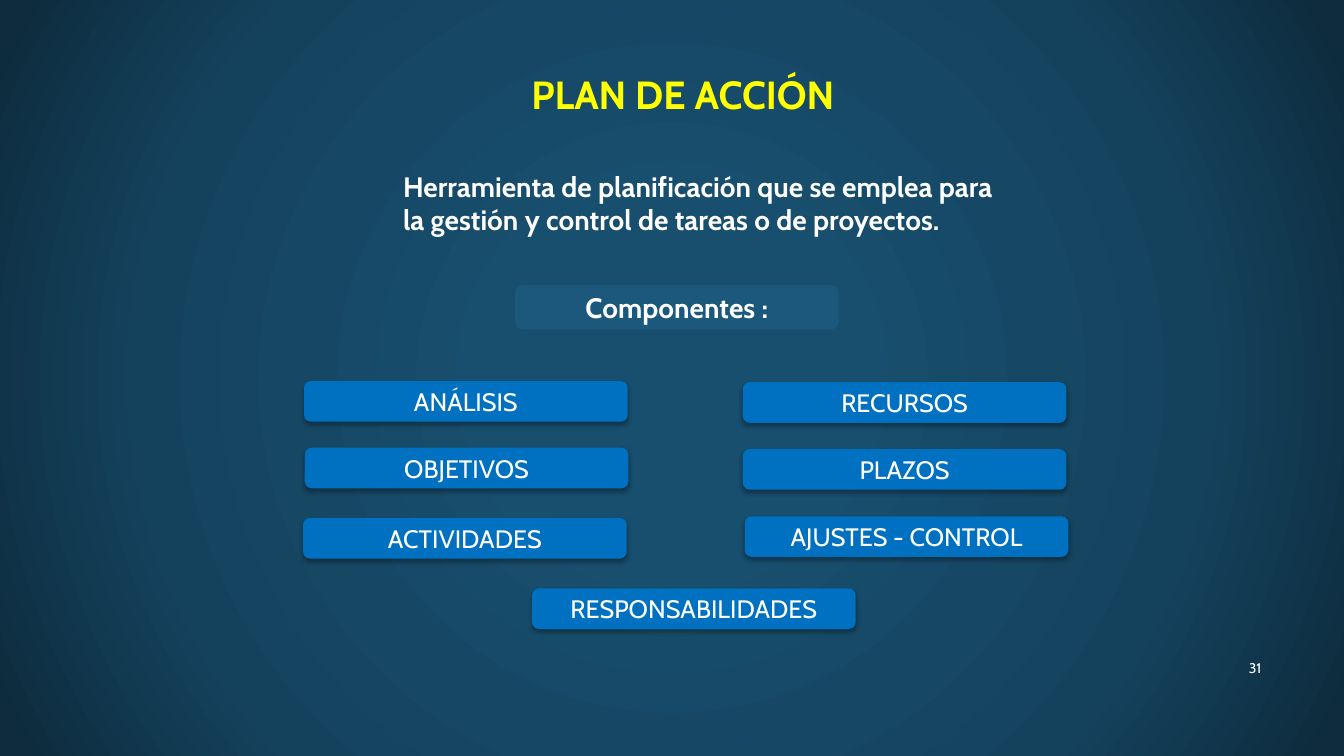
from dataclasses import dataclass

from lxml import etree
from pptx import Presentation
from pptx.dml.color import RGBColor
from pptx.enum.shapes import MSO_SHAPE
from pptx.enum.text import MSO_ANCHOR as Anchor, PP_ALIGN as Align
from pptx.oxml import parse_xml
from pptx.oxml.ns import nsdecls, qn
from pptx.shapes.autoshape import Shape
from pptx.slide import Slide
from pptx.util import Pt

FONT = "Cabin"
WHITE = RGBColor(0xFF, 0xFF, 0xFF)
YELLOW = RGBColor(0xFF, 0xFF, 0x00)
BLUE = RGBColor(0x00, 0x70, 0xC0)
TEAL = RGBColor(0x1B, 0x58, 0x7C)
BLACK = RGBColor(0x00, 0x00, 0x00)
BACKGROUND_STOPS = (
    (0, RGBColor(0x18, 0x4E, 0x6E)),
    (23, RGBColor(0x18, 0x4E, 0x6E)),
    (69, RGBColor(0x14, 0x42, 0x5D)),
    (97, RGBColor(0x0E, 0x2C, 0x3E)),
)
BUTTON_WIDTH = 231.1


@dataclass(frozen=True)
class Button:
    text: str
    left: float
    top: float
    height: float = 29
    size: float = 18
    fill: RGBColor = BLUE
    bold: bool = False
    shadow: bool = True


BUTTONS = (
    # Left column
    Button("ANÁLISIS", 217.2, 272.2),
    Button("OBJETIVOS", 217.7, 319.8),
    Button("ACTIVIDADES", 216.5, 370),
    # Bottom centre
    Button("RESPONSABILIDADES", 380, 420.3),
    # Right column
    Button("RECURSOS", 530.6, 273),
    Button("PLAZOS", 530.6, 320.8),
    Button("AJUSTES - CONTROL", 532, 368.8),
    # Heading above the columns
    Button("Componentes :", 367.9, 203.6, 31.7, 20, TEAL, bold=True, shadow=False),
)


def write_text(shape: Shape, text: str, size: float, color: RGBColor = WHITE,
               bold: bool = False, align: Align = Align.CENTER,
               anchor: Anchor = Anchor.MIDDLE) -> None:
    frame = shape.text_frame
    frame.text = text
    frame.word_wrap = True
    frame.vertical_anchor = anchor
    paragraph = frame.paragraphs[0]
    paragraph.alignment = align
    font = paragraph.runs[0].font
    font.name, font.size, font.bold = FONT, Pt(size), bold
    font.color.rgb = color


def set_background(slide: Slide) -> None:
    stops = "".join(
        f'<a:gs pos="{position * 1000}"><a:srgbClr val="{color}"/></a:gs>'
        for position, color in BACKGROUND_STOPS)
    background = parse_xml(
        f'<p:bg {nsdecls("p", "a")}><p:bgPr><a:gradFill rotWithShape="1">'
        f'<a:gsLst>{stops}</a:gsLst><a:path path="circle">'
        '<a:fillToRect l="50000" t="50000" r="50000" b="50000"/></a:path>'
        '</a:gradFill><a:effectLst/></p:bgPr></p:bg>')
    slide.element.cSld.insert(0, background)


def add_soft_shadow(shape: Shape) -> None:
    effects = shape.element.spPr.find(qn("a:effectLst"))
    shadow = etree.SubElement(
        effects, qn("a:outerShdw"), blurRad=str(Pt(3.5)), dist=str(Pt(2.2)),
        dir="5400000", algn="t", rotWithShape="0")
    color = etree.SubElement(shadow, qn("a:srgbClr"), val=str(BLACK))
    etree.SubElement(color, qn("a:alpha"), val="32000")


def add_button(slide: Slide, button: Button) -> None:
    shape = slide.shapes.add_shape(
        MSO_SHAPE.ROUNDED_RECTANGLE, Pt(button.left), Pt(button.top),
        Pt(BUTTON_WIDTH), Pt(button.height))
    shape.fill.solid()
    shape.fill.fore_color.rgb = button.fill
    shape.line.fill.background()
    shape.shadow.inherit = False
    if button.shadow:
        add_soft_shadow(shape)
    write_text(shape, button.text, button.size, bold=button.bold)


def main() -> None:
    presentation = Presentation()
    presentation.slide_width, presentation.slide_height = Pt(960), Pt(540)
    slide = presentation.slides.add_slide(presentation.slide_layouts[5])
    set_background(slide)

    # Title
    title = slide.shapes.title
    title.left, title.top = Pt(300.2), Pt(38.9)
    title.width, title.height = Pt(375.1), Pt(56.2)
    write_text(title, "PLAN DE ACCIÓN", 28, YELLOW, bold=True)

    # Definition
    definition = slide.shapes.add_textbox(Pt(280.8), Pt(117.4), Pt(445.7), Pt(55.4))
    write_text(definition, "Herramienta de planificación que se emplea para la gestión "
               "y control de tareas o de proyectos.", 20, bold=True,
               align=Align.LEFT, anchor=Anchor.TOP)

    # Components
    for button in BUTTONS:
        add_button(slide, button)

    # Page number
    page_number = slide.shapes.add_textbox(Pt(808.6), Pt(462.2), Pt(99.4), Pt(29.5))
    write_text(page_number, "31", 10, align=Align.RIGHT)

    presentation.save("out.pptx")


if __name__ == "__main__":
    main()
